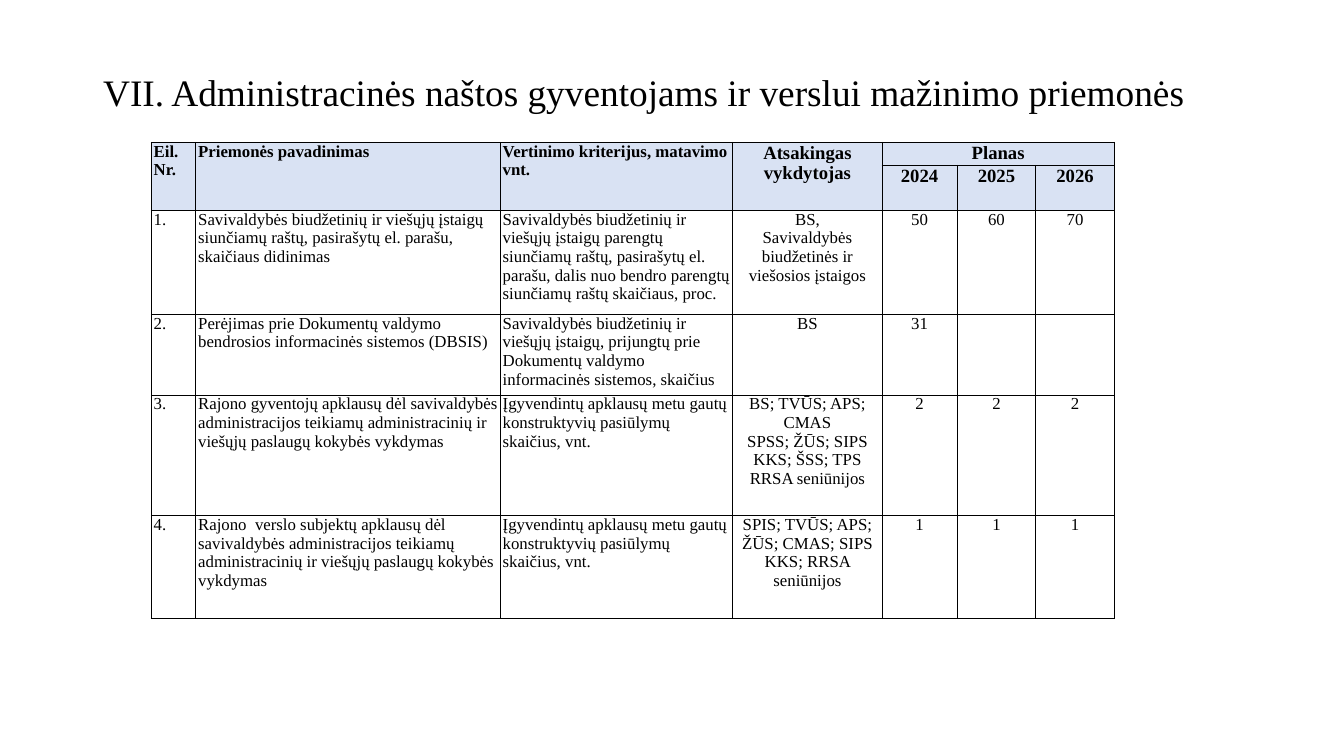
"""Builds a slide with a table of measures that reduce the administrative burden."""
import pptx
import pptx.dml.color
import pptx.enum.text
import pptx.oxml
import pptx.oxml.ns
import pptx.util

Cm = pptx.util.Cm
Pt = pptx.util.Pt
ALIGN = pptx.enum.text.PP_ALIGN
BLACK = pptx.dml.color.RGBColor(0x00, 0x00, 0x00)
HEADER_BLUE = pptx.dml.color.RGBColor(0xD9, 0xE2, 0xF3)
FONT = "Times New Roman"


def write_text(frame, text, size=18, bold=False, align=ALIGN.LEFT, spacing=None):
    frame.text = text
    for paragraph in frame.paragraphs:
        paragraph.alignment = align
        paragraph.line_spacing = spacing
        paragraph.font.name = FONT
        paragraph.font.size = Pt(size)
        paragraph.font.bold = bold
        paragraph.font.color.rgb = BLACK
        for run in paragraph.runs:
            run.font.name = FONT
            run.font.size = Pt(size)
            run.font.bold = bold
            run.font.color.rgb = BLACK


def draw_borders(cell):
    properties = cell._tc.get_or_add_tcPr()
    for position, side in enumerate(("lnL", "lnR", "lnT", "lnB")):
        border = pptx.oxml.parse_xml(
            f'<a:{side} {pptx.oxml.ns.nsdecls("a")} w="12700">'
            f'<a:solidFill><a:srgbClr val="{BLACK}"/></a:solidFill></a:{side}>'
        )
        properties.insert(position, border)


presentation = pptx.Presentation()
presentation.slide_width = Cm(50.8)
presentation.slide_height = Cm(28.58)
slide = presentation.slides.add_slide(presentation.slide_layouts[5])

title = slide.shapes.title
title.left, title.top, title.width, title.height = Cm(2.11), Cm(2.06), Cm(44.45), Cm(2.18)
title.text_frame.word_wrap = True
title.text_frame.auto_size = pptx.enum.text.MSO_AUTO_SIZE.SHAPE_TO_FIT_TEXT
title.text_frame.vertical_anchor = pptx.enum.text.MSO_ANCHOR.TOP
write_text(
    title.text_frame,
    "VII. Administracinės naštos gyventojams ir verslui mažinimo priemonės",
    size=40, align=ALIGN.CENTER, spacing=Pt(60),
)

headings = ["Eil. Nr.", "Priemonės pavadinimas", "Vertinimo kriterijus, matavimo vnt.",
            "Atsakingas vykdytojas", "Planas", "", ""]
years = ["", "", "", "", "2024", "2025", "2026"]
survey_criterion = "Įgyvendintų apklausų metu gautų konstruktyvių pasiūlymų skaičius, vnt."
measures = [
    ["1.",
     "Savivaldybės biudžetinių ir viešųjų įstaigų siunčiamų raštų, "
     "pasirašytų el. parašu, skaičiaus didinimas",
     "Savivaldybės biudžetinių ir viešųjų įstaigų parengtų siunčiamų raštų, pasirašytų el. "
     "parašu, dalis nuo bendro parengtų siunčiamų raštų skaičiaus, proc.",
     "BS,\nSavivaldybės biudžetinės ir viešosios įstaigos", "50", "60", "70"],
    ["2.",
     "Perėjimas prie Dokumentų valdymo bendrosios informacinės sistemos (DBSIS)",
     "Savivaldybės biudžetinių ir viešųjų įstaigų, prijungtų prie Dokumentų valdymo "
     "informacinės sistemos, skaičius",
     "BS", "31", "", ""],
    ["3.",
     "Rajono gyventojų apklausų dėl savivaldybės administracijos teikiamų "
     "administracinių ir viešųjų paslaugų kokybės vykdymas",
     survey_criterion,
     "BS; TVŪS; APS; CMAS\nSPSS; ŽŪS; SIPS\nKKS; ŠSS; TPS\nRRSA seniūnijos", "2", "2", "2"],
    ["4.",
     "Rajono  verslo subjektų apklausų dėl savivaldybės administracijos teikiamų "
     "administracinių ir viešųjų paslaugų kokybės vykdymas",
     survey_criterion,
     "SPIS; TVŪS; APS;\nŽŪS; CMAS; SIPS\nKKS; RRSA seniūnijos", "1", "1", "1"],
]
rows = [headings, years] + measures
column_widths = [1.68, 11.51, 8.79, 5.64, 2.84, 2.97, 2.97]
row_heights = [0.87, 1.7, 3.93, 3.02, 4.57, 3.89]

plan = slide.shapes.add_table(
    len(rows), len(column_widths), Cm(5.72), Cm(5.38),
    Cm(sum(column_widths)), Cm(sum(row_heights)),
).table
for column, width in zip(plan.columns, column_widths):
    column.width = Cm(width)
for row, height in zip(plan.rows, row_heights):
    row.height = Cm(height)

for row_index, row in enumerate(rows):
    for column_index, text in enumerate(row):
        cell = plan.cell(row_index, column_index)
        is_heading = row_index < 2
        is_centred = column_index >= 3
        cell.margin_left = cell.margin_right = Cm(0.09)
        cell.margin_top = cell.margin_bottom = 0
        if is_heading:
            cell.fill.solid()
            cell.fill.fore_color.rgb = HEADER_BLUE
        else:
            cell.fill.background()
        draw_borders(cell)
        write_text(
            cell.text_frame, text,
            size=20 if is_heading and is_centred else 18,
            bold=is_heading,
            align=ALIGN.CENTER if is_centred else ALIGN.LEFT,
        )

for column_index in range(4):
    plan.cell(0, column_index).merge(plan.cell(1, column_index))
plan.cell(0, 4).merge(plan.cell(0, 6))

presentation.save("out.pptx")
